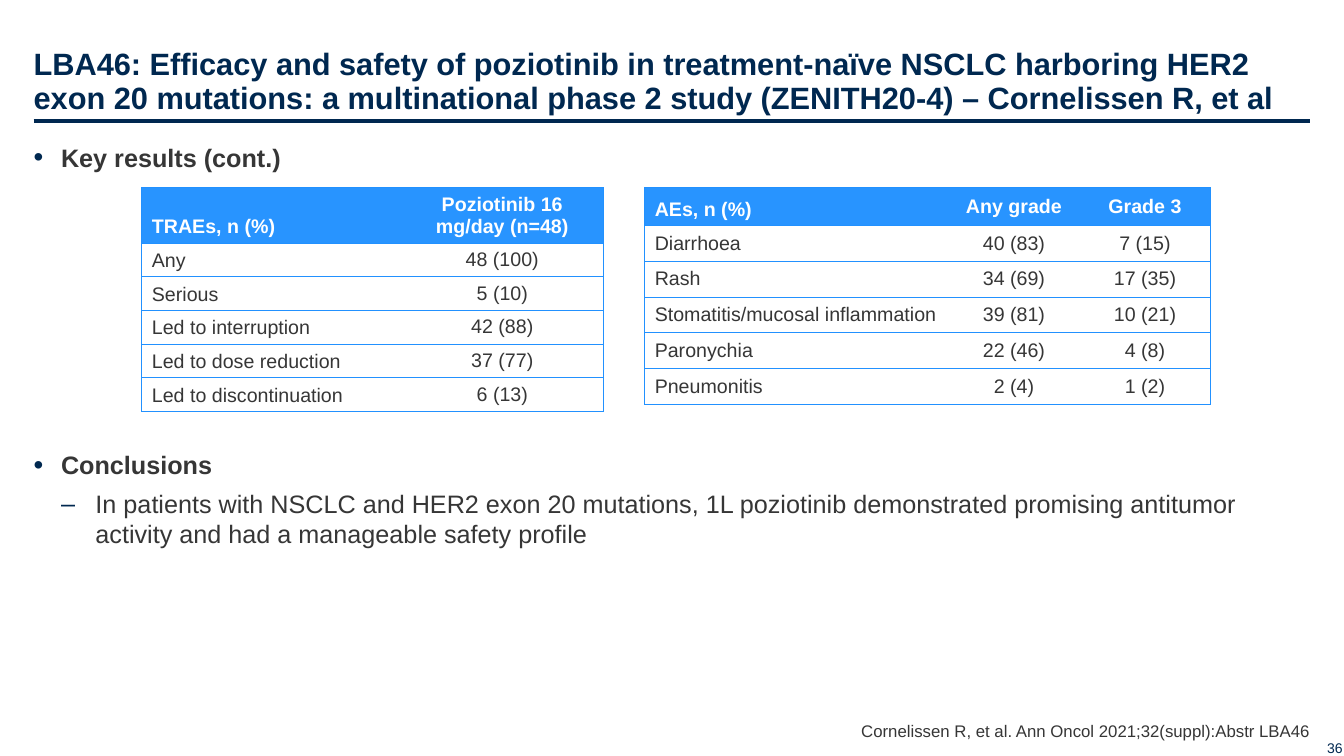
from lxml.etree import SubElement
from pptx import Presentation
from pptx.dml.color import RGBColor
from pptx.enum.shapes import MSO_CONNECTOR
from pptx.enum.text import MSO_ANCHOR, PP_ALIGN
from pptx.oxml.ns import qn
from pptx.util import Pt

NO_GRID_STYLE = "{2D5ABB26-0587-4C30-8999-92F81FD0307C}"


def color(hex_code):
    return RGBColor.from_string(hex_code)


def write(paragraph, text, size=18, fill="363636", bold=False,
          align=PP_ALIGN.LEFT, before=0, after=0, spacing=1.0):
    """Put one formatted run into a paragraph."""
    paragraph.alignment = align
    paragraph.space_before, paragraph.space_after = Pt(before), Pt(after)
    paragraph.line_spacing = spacing
    run = paragraph.add_run()
    run.text = text
    run.font.name, run.font.size, run.font.bold = "Arial", Pt(size), bold
    run.font.color.rgb = color(fill)


class StudySlide:
    navy, blue, white = "002850", "2894FF", "FFFFFF"
    border = "2291FF"

    def __init__(self, presentation):
        self.slide = presentation.slides.add_slide(presentation.slide_layouts[6])

    def rule(self, left, right, top):
        line = self.slide.shapes.add_connector(
            MSO_CONNECTOR.STRAIGHT, Pt(left), Pt(top), Pt(right), Pt(top))
        line.line.color.rgb = color(self.navy)
        line.line.width = Pt(2.25)
        SubElement(line._element.spPr, qn("a:effectLst"))

    def text_box(self, left, top, width, height, anchor=MSO_ANCHOR.BOTTOM, inset=0):
        frame = self.slide.shapes.add_textbox(
            Pt(left), Pt(top), Pt(width), Pt(height)).text_frame
        frame.word_wrap = True
        frame.vertical_anchor = anchor
        frame.margin_left = frame.margin_right = frame.margin_bottom = 0
        frame.margin_top = Pt(inset)
        return frame

    def text(self, box, text, inset=0, **style):
        write(self.text_box(*box, inset=inset).paragraphs[0], text, **style)

    def bullets(self, box, items):
        """Each item: text, level, space before."""
        frame = self.text_box(*box, anchor=MSO_ANCHOR.TOP, inset=3.6)
        for index, (text, level, before) in enumerate(items):
            paragraph = frame.add_paragraph() if index else frame.paragraphs[0]
            paragraph.level = level
            write(paragraph, text, bold=level == 0, before=before, after=6)
            indent, hanging, size, mark = [(19.6, 19.6, 110, "•"),
                                           (44.2, 24.6, 100, "–")][level]
            properties = paragraph._p.get_or_add_pPr()
            properties.set("marL", str(Pt(indent)))
            properties.set("indent", str(-Pt(hanging)))
            bullet_color = SubElement(properties, qn("a:buClr"))
            SubElement(bullet_color, qn("a:srgbClr"), val=self.navy)
            SubElement(properties, qn("a:buSzPct"), val=str(size * 1000))
            SubElement(properties, qn("a:buFont"), typeface="Arial")
            SubElement(properties, qn("a:buChar"), char=mark)

    def cell_borders(self, cell, sides):
        properties = cell._tc.get_or_add_tcPr()
        for side in sides:
            line = SubElement(properties, qn(f"a:ln{side}"), w=str(Pt(0.75)))
            fill = SubElement(line, qn("a:solidFill"))
            SubElement(fill, qn("a:srgbClr"), val=self.border)

    def table(self, left, top, widths, header_height, row_height, rows,
              label_anchor=MSO_ANCHOR.MIDDLE):
        heights = [header_height] + [row_height] * (len(rows) - 1)
        table = self.slide.shapes.add_table(
            len(rows), len(widths), Pt(left), Pt(top),
            Pt(sum(widths)), Pt(sum(heights))).table
        table._tbl.tblPr.find(qn("a:tableStyleId")).text = NO_GRID_STYLE
        table.horz_banding = False
        for column, width in zip(table.columns, widths):
            column.width = Pt(width)
        for row, height in zip(table.rows, heights):
            row.height = Pt(height)
        for r, values in enumerate(rows):
            for c, value in enumerate(values):
                cell = table.cell(r, c)
                header, label = r == 0, c == 0
                # Outer frame and row lines, no inner column lines
                sides = ("L" if label else "") + ("R" if c == len(widths) - 1 else "")
                self.cell_borders(cell, sides + "TB")
                cell.fill.solid()
                cell.fill.fore_color.rgb = color(self.blue if header else self.white)
                cell.vertical_anchor = MSO_ANCHOR.MIDDLE
                if label:
                    cell.vertical_anchor = MSO_ANCHOR.BOTTOM if header else label_anchor
                elif header:
                    cell.margin_left = cell.margin_right = Pt(3)
                    cell.margin_top = cell.margin_bottom = Pt(3)
                write(cell.text_frame.paragraphs[0], value, size=14, bold=header,
                      fill=self.white if header else "363636",
                      align=PP_ALIGN.LEFT if label else PP_ALIGN.CENTER)


def main():
    presentation = Presentation()
    presentation.slide_width, presentation.slide_height = Pt(960), Pt(540)
    page = StudySlide(presentation)

    # Title and rule
    page.rule(24, 936, 86.4)
    page.text((24, 8.6, 912, 74.2),
              "LBA46: Efficacy and safety of poziotinib in treatment-naïve NSCLC "
              "harboring HER2 exon 20 mutations: a multinational phase 2 study "
              "(ZENITH20-4) – Cornelissen R, et al",
              inset=3.6, size=22, fill=page.navy, bold=True, spacing=0.9)

    # Key results and conclusions
    page.bullets((24, 98, 912, 398), [
        ("Key results (cont.)", 0, 0),
        ("Conclusions", 0, 192),
        ("In patients with NSCLC and HER2 exon 20 mutations, 1L poziotinib "
         "demonstrated promising antitumor activity and had a manageable "
         "safety profile", 1, 0),
    ])

    # Treatment-related adverse events
    page.table(101.3, 134, [185, 145], 37.2, 24, [
        ("TRAEs, n (%)", "Poziotinib 16 mg/day (n=48)"),
        ("Any", "48 (100)"),
        ("Serious", "5 (10)"),
        ("Led to interruption", "42 (88)"),
        ("Led to dose reduction", "37 (77)"),
        ("Led to discontinuation", "6 (13)"),
    ], label_anchor=MSO_ANCHOR.BOTTOM)

    # Adverse events by grade
    page.table(460.5, 134, [217, 93.6, 93.6], 27.2, 25.5, [
        ("AEs, n (%)", "Any grade", "Grade 3"),
        ("Diarrhoea", "40 (83)", "7 (15)"),
        ("Rash", "34 (69)", "17 (35)"),
        ("Stomatitis/mucosal inflammation", "39 (81)", "10 (21)"),
        ("Paronychia", "22 (46)", "4 (8)"),
        ("Pneumonitis", "2 (4)", "1 (2)"),
    ])

    # Reference and slide number
    page.text((502.6, 513.4, 433.4, 15.8),
              "Cornelissen R, et al. Ann Oncol 2021;32(suppl):Abstr LBA46",
              size=12, align=PP_ALIGN.RIGHT, before=6)
    page.text((913, 511.2, 46, 28.8), "36", size=10, fill=page.navy,
              align=PP_ALIGN.RIGHT)

    presentation.save("out.pptx")


if __name__ == "__main__":
    main()
